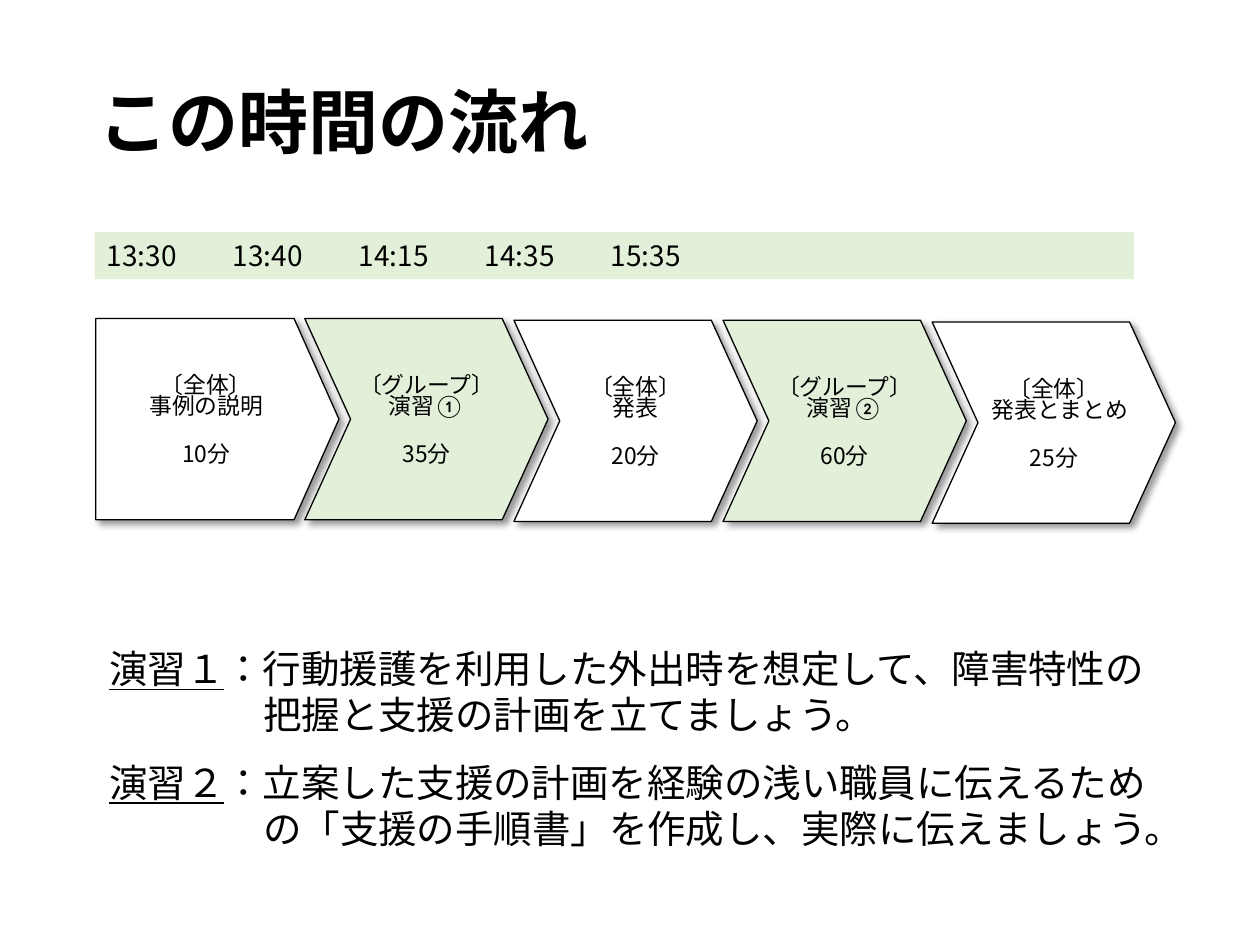
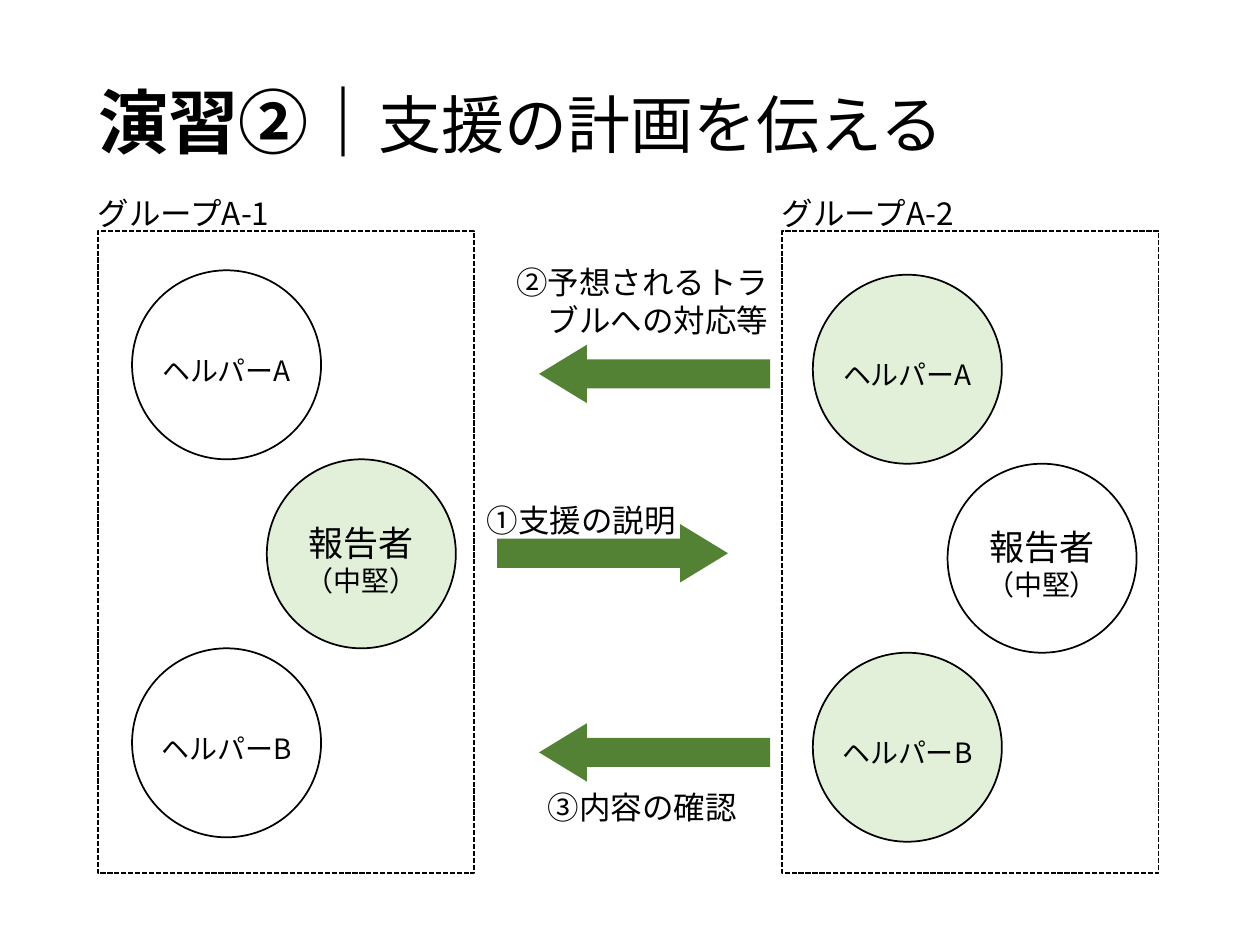
from dataclasses import dataclass

from lxml import etree
from pptx import Presentation
from pptx.dml.color import RGBColor
from pptx.enum.dml import MSO_LINE
from pptx.enum.lang import MSO_LANGUAGE_ID
from pptx.enum.shapes import MSO_SHAPE
from pptx.enum.text import MSO_ANCHOR, MSO_AUTO_SIZE, PP_ALIGN
from pptx.oxml import parse_xml
from pptx.oxml.ns import qn
from pptx.util import Pt

RECTANGLE, ELLIPSE = MSO_SHAPE.RECTANGLE, MSO_SHAPE.OVAL
PENTAGON, CHEVRON = MSO_SHAPE.PENTAGON, MSO_SHAPE.CHEVRON
RIGHT_ARROW, LEFT_ARROW = MSO_SHAPE.RIGHT_ARROW, MSO_SHAPE.LEFT_ARROW
LEFT, CENTER, RIGHT = PP_ALIGN.LEFT, PP_ALIGN.CENTER, PP_ALIGN.RIGHT
TOP, MIDDLE = MSO_ANCHOR.TOP, MSO_ANCHOR.MIDDLE
GROW = MSO_AUTO_SIZE.SHAPE_TO_FIT_TEXT
SHORT_DASH = MSO_LINE.SQUARE_DOT
JAPANESE = MSO_LANGUAGE_ID.JAPANESE
DEFAULT_INSETS = (7.2, 3.6, 7.2, 3.6)
SHADOW_XML = (
    '<a:effectLst xmlns:a="http://schemas.openxmlformats.org/drawingml/2006/main">'
    '<a:outerShdw blurRad="50800" dist="38100" dir="2700000" algn="tl" rotWithShape="0">'
    '<a:srgbClr val="000000"><a:alpha val="40000"/></a:srgbClr>'
    "</a:outerShdw></a:effectLst>"
)


@dataclass(frozen=True)
class Theme:
    ink: str = "000000"
    paper: str = "FFFFFF"
    pale_green: str = "E2F0D9"
    dark_green: str = "548235"
    font: str = "Noto Sans CJK JP"
    step_font: str = "Calibri"
    title: int = 40
    subtitle: int = 36
    body: int = 22
    role: int = 20
    label: int = 18
    small: int = 16
    step: int = 13


@dataclass(frozen=True)
class Run:
    text: str
    size: int
    font: str = Theme.font
    bold: bool = False
    underline: bool = False


@dataclass(frozen=True)
class Paragraph:
    runs: tuple
    align: int = LEFT
    line_spacing: object = None
    space_before: float = 0
    margin: float = 0
    indent: float = 0
    tabs: tuple = ()


class Deck:
    def __init__(self, theme):
        self.theme = theme
        self.presentation = Presentation()
        self.presentation.slide_width = Pt(720)
        self.presentation.slide_height = Pt(540)
        self.slide = None

    def new_slide(self, *title_runs):
        self.slide = self.presentation.slides.add_slide(self.presentation.slide_layouts[6])
        self.text_box((49.5, 29, 621, 86), [Paragraph(title_runs, line_spacing=0.9)])

    def fill_text(self, shape, paragraphs, anchor=MIDDLE, wrap=True, insets=DEFAULT_INSETS):
        frame = shape.text_frame
        frame.word_wrap = wrap
        frame.vertical_anchor = anchor
        frame.margin_left, frame.margin_top, frame.margin_right, frame.margin_bottom = map(Pt, insets)
        for index, content in enumerate(paragraphs):
            paragraph = frame.add_paragraph() if index else frame.paragraphs[0]
            paragraph.alignment = content.align
            paragraph.space_before = Pt(content.space_before)
            if content.line_spacing:
                paragraph.line_spacing = content.line_spacing
            properties = paragraph._p.get_or_add_pPr()
            properties.set("marL", str(Pt(content.margin)))
            properties.set("indent", str(Pt(content.indent)))
            if content.tabs:
                tab_list = etree.SubElement(properties, qn("a:tabLst"))
                for position in content.tabs:
                    etree.SubElement(tab_list, qn("a:tab"), pos=str(Pt(position)), algn="l")
            for item in content.runs:
                self.add_run(paragraph, item)

    def add_run(self, paragraph, item):
        run = paragraph.add_run()
        run.text = item.text
        run.font.size = Pt(item.size)
        run.font.name = item.font
        run.font.bold = item.bold
        run.font.underline = item.underline
        run.font.language_id = JAPANESE
        run.font.color.rgb = RGBColor.from_string(self.theme.ink)
        east_asian = etree.Element(qn("a:ea"), typeface=item.font)
        run._r.rPr.find(qn("a:latin")).addnext(east_asian)

    def text_box(self, box, paragraphs):
        shape = self.slide.shapes.add_textbox(*map(Pt, box))
        self.fill_text(shape, paragraphs)

    def label(self, box, *paragraphs):
        shape = self.slide.shapes.add_textbox(*map(Pt, box))
        self.fill_text(shape, paragraphs, anchor=TOP, wrap=False)
        shape.text_frame.auto_size = GROW

    def shape(self, kind, box, fill=None, line=None, dash=None, adjustments=(), shadow=False):
        shape = self.slide.shapes.add_shape(kind, *map(Pt, box))
        shape.shadow.inherit = False
        if shadow:
            plain = shape._element.spPr.find(qn("a:effectLst"))
            plain.getparent().replace(plain, parse_xml(SHADOW_XML))
        if fill:
            shape.fill.solid()
            shape.fill.fore_color.rgb = RGBColor.from_string(fill)
        else:
            shape.fill.background()
        if line:
            shape.line.color.rgb = RGBColor.from_string(self.theme.ink)
            shape.line.width = Pt(line)
            if dash:
                shape.line.dash_style = dash
        else:
            shape.line.fill.background()
        for index, value in enumerate(adjustments):
            shape.adjustments[index] = value
        return shape

    def step(self, index, audience, activity, minutes, align=CENTER):
        theme = self.theme
        first = index == 0
        shape = self.shape(
            PENTAGON if first else CHEVRON,
            (54.7 + 119.5 * index, 182 + index // 2, 139, 115),
            fill=theme.pale_green if index % 2 else theme.paper,
            line=0.75,
            adjustments=(0.223 if first else 0.228,),
            shadow=True,
        )
        size, font = theme.step, theme.step_font
        paragraphs = [
            Paragraph((Run(audience, size, font),), CENTER),
            Paragraph((Run(activity, size, font),), align, line_spacing=Pt(12)),
            Paragraph((Run(minutes, size), Run("分", size, font)), CENTER, space_before=12),
        ]
        self.fill_text(shape, paragraphs, insets=DEFAULT_INSETS if first else (1, 3.6, 1, 3.6))

    def person(self, left, top, fill, *runs):
        shape = self.shape(ELLIPSE, (left, top, 108, 108), fill, line=1)
        paragraphs = [Paragraph((run,), CENTER) for run in runs]
        self.fill_text(shape, paragraphs, wrap=False, insets=(0, 6, 0, 0))

    def group(self, name, frame_left, circle_left, circle_top, helper_fill, reporter_fill):
        theme = self.theme
        for letter, offset in (("A", 0), ("B", 216)):
            self.person(circle_left, circle_top + offset, helper_fill,
                        Run(f"ヘルパー{letter}", theme.small))
        self.person(circle_left + 77, circle_top + 108, reporter_fill,
                    Run("報告者", theme.role), Run("（中堅）", theme.small))
        self.shape(RECTANGLE, (frame_left, 132, 215, 367), line=1, dash=SHORT_DASH)
        self.label((frame_left - 7.2, 107.5, 119, 29), Paragraph((Run(name, theme.label),)))

    def arrow(self, kind, left, top):
        self.shape(kind, (left, top, 132, 33.3), self.theme.dark_green, adjustments=(0.5, 0.82))


def build_schedule(deck):
    theme = deck.theme
    deck.new_slide(Run("この時間の流れ", theme.title, bold=True))

    band = deck.shape(RECTANGLE, (54, 132.5, 594, 27), theme.pale_green)
    times = "\t".join(("13:30", "13:40", "14:15", "14:35", "15:35"))
    deck.fill_text(band, [Paragraph((Run(times, theme.small),), tabs=(127, 230, 341, 456))])

    steps = (
        ("〔全体〕", "事例の説明", "10"),
        ("〔グループ〕", "演習①", "35"),
        ("〔全体〕", "発表", "20"),
        ("〔グループ〕", "演習②", "60"),
        ("〔全体〕", "発表とまとめ", "25", RIGHT),
    )
    for index, step in enumerate(steps):
        deck.step(index, *step)

    exercises = (
        ("演習１", "：行動援護を利用した外出時を想定して、障害特性の把握と支援の計画を立てましょう。", 0),
        ("演習２", "：立案した支援の計画を経験の浅い職員に伝えるための「支援の手順書」を作成し、実際に伝えましょう。", 12),
    )
    deck.text_box((55.4, 343.5, 616.3, 168), [
        Paragraph((Run(name, theme.body, underline=True), Run(task, theme.body)),
                  space_before=gap, margin=88, indent=-88)
        for name, task, gap in exercises
    ])


def build_exchange(deck):
    theme = deck.theme
    deck.new_slide(Run("演習②｜", theme.title, bold=True),
                   Run("支援の計画を伝える", theme.subtitle))

    deck.arrow(RIGHT_ARROW, 284, 299.5)
    for top in (197, 413.3):
        deck.arrow(LEFT_ARROW, 308, top)

    deck.group("グループA-1", 56, 75.5, 154.5, theme.paper, theme.pale_green)
    deck.group("グループA-2", 447, 464.5, 157, theme.pale_green, theme.paper)

    deck.label((271, 283, 124, 29), Paragraph((Run("①支援の説明", theme.label),)))
    deck.label((306, 447, 124, 29), Paragraph((Run("③内容の確認", theme.label),)))
    deck.label((288, 147, 160, 51),
               Paragraph((Run("②予想されるトラ", theme.label),)),
               Paragraph((Run("ブルへの対応等", theme.label),), margin=18))


def main():
    deck = Deck(Theme())
    build_schedule(deck)
    build_exchange(deck)
    deck.presentation.save("out.pptx")


if __name__ == "__main__":
    main()
